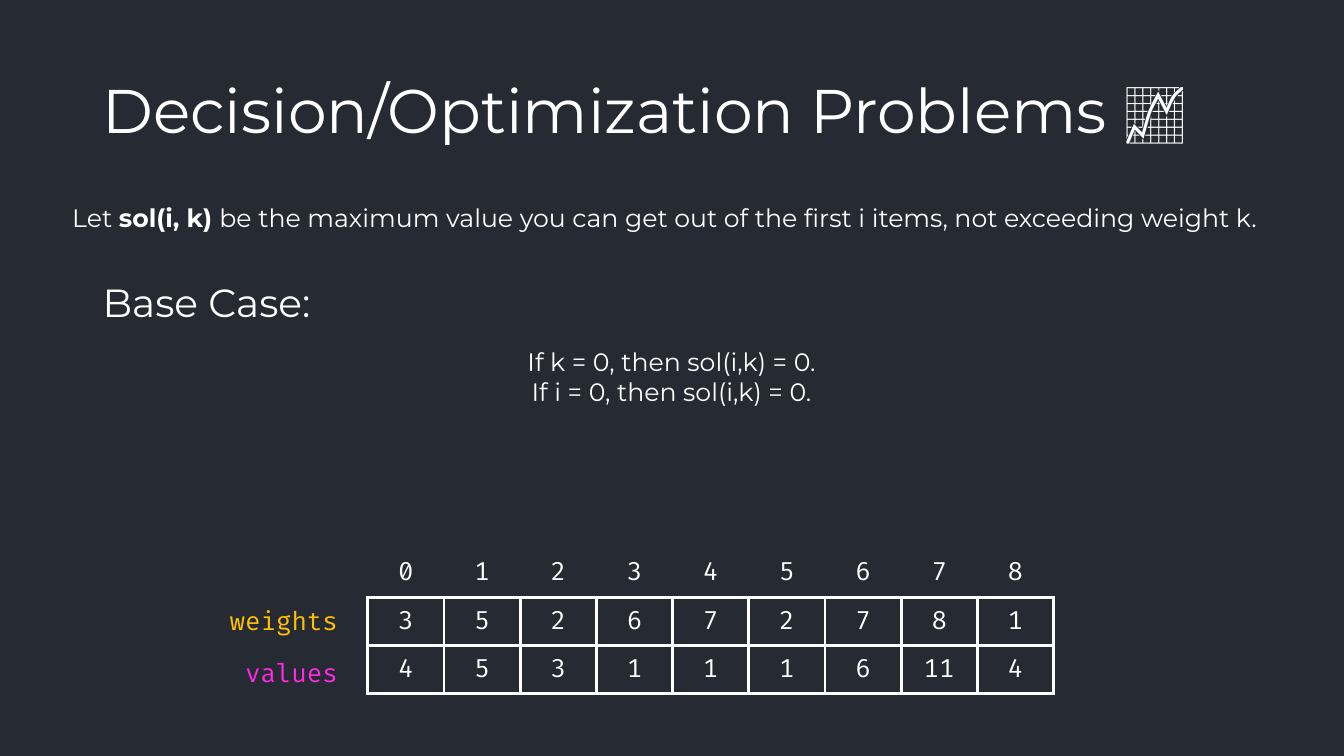
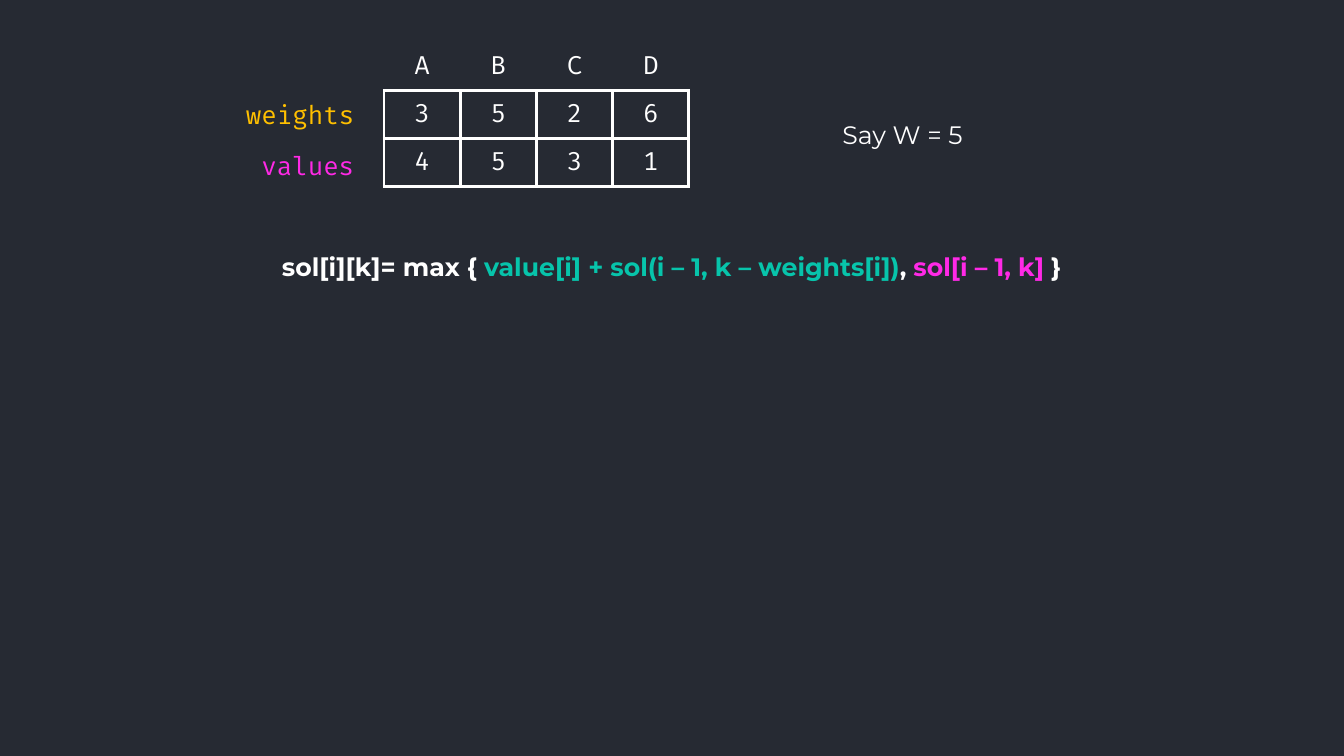
import pptx
import pptx.dml.color
import pptx.enum.text
import pptx.oxml
import pptx.oxml.ns
import pptx.util

Cm, Pt = pptx.util.Cm, pptx.util.Pt
ALIGN = pptx.enum.text.PP_ALIGN
ANCHOR = pptx.enum.text.MSO_ANCHOR

# Shared look
BACKGROUND, WHITE = "262A33", "FFFFFF"
AMBER, MAGENTA, TEAL = "FFC000", "FF29E6", "07C4AB"
PROSE, CODE = "Montserrat", "Fira Code"
BODY_SIZE = 18
COLUMN_WIDTH, ROW_HEIGHT = 1.92, 1.21
BORDER_WIDTH = Pt(2.25)
LABEL_OFFSET, LABEL_WIDTH, LABEL_STEP = 4.06, 3.56, 1.3

# Content: a run is (text, colour, bold), a paragraph is a list of runs
TITLE = [[("Decision/Optimization Problems 📈", WHITE, False)]]
DEFINITION = [[
    ("Let ", WHITE, False),
    ("sol(i, k) ", WHITE, True),
    ("be the maximum value you can get out of the first i items, "
     "not exceeding weight k.", WHITE, False),
]]
BASE_CASE_HEADING = [[("Base Case:", WHITE, False)]]
BASE_CASES = [
    [("If k = 0, then sol(i,k) = 0.", WHITE, False)],
    [("If i = 0, then sol(i,k) = 0.", WHITE, False)],
]
RECURRENCE = [[
    ("sol[i][k]= max { ", WHITE, True),
    ("value[i] + sol(i – 1, k – weights[i])", TEAL, True),
    (", ", WHITE, True),
    ("sol[i – 1, k] ", MAGENTA, True),
    ("}", WHITE, True),
]]
CAPACITY = [[("Say W = 5", WHITE, False)]]
ITEM_LABELS = [("weights", AMBER), ("values", MAGENTA)]
NUMBERED_ITEMS = [
    ["0", "1", "2", "3", "4", "5", "6", "7", "8"],
    ["3", "5", "2", "6", "7", "2", "7", "8", "1"],
    ["4", "5", "3", "1", "1", "1", "6", "11", "4"],
]
LETTERED_ITEMS = [
    ["A", "B", "C", "D"],
    ["3", "5", "2", "6"],
    ["4", "5", "3", "1"],
]


def rgb(colour):
    return pptx.dml.color.RGBColor.from_string(colour)


def add_run(paragraph, text, font, size, colour, bold=False):
    run = paragraph.add_run()
    run.text = text
    run.font.name = font
    run.font.size = Pt(size)
    run.font.bold = bold
    run.font.color.rgb = rgb(colour)


def add_text(slide, box, paragraphs, font=PROSE, size=BODY_SIZE,
             align=ALIGN.LEFT, anchor=ANCHOR.TOP, wrap=True, spacing=1.0):
    frame = slide.shapes.add_textbox(*map(Cm, box)).text_frame
    frame.word_wrap = wrap
    frame.vertical_anchor = anchor
    for index, runs in enumerate(paragraphs):
        paragraph = frame.add_paragraph() if index else frame.paragraphs[0]
        paragraph.alignment = align
        paragraph.line_spacing = spacing
        for text, colour, bold in runs:
            add_run(paragraph, text, font, size, colour, bold)


def set_borders(cell, visible_sides):
    properties = cell._tc.get_or_add_tcPr()
    for side in "LRTB":
        fill = (f'<a:solidFill><a:srgbClr val="{WHITE}"/></a:solidFill>'
                if side in visible_sides else "<a:noFill/>")
        properties.append(pptx.oxml.parse_xml(
            f'<a:ln{side} {pptx.oxml.ns.nsdecls("a")} w="{BORDER_WIDTH}">'
            f"{fill}</a:ln{side}>"))


def add_items(slide, left, top, rows):
    """Table of items with a borderless header and labels on its left."""
    for number, (label, colour) in enumerate(ITEM_LABELS, start=1):
        box = (left - LABEL_OFFSET, top + number * LABEL_STEP, LABEL_WIDTH, 1.02)
        add_text(slide, box, [[(label, colour, False)]], font=CODE,
                 align=ALIGN.RIGHT)

    width, height = COLUMN_WIDTH * len(rows[0]), ROW_HEIGHT * len(rows)
    table = slide.shapes.add_table(
        len(rows), len(rows[0]), Cm(left), Cm(top), Cm(width), Cm(height)).table
    table.first_row = table.horz_banding = False
    for column in table.columns:
        column.width = Cm(COLUMN_WIDTH)
    for row_index, row in enumerate(rows):
        table.rows[row_index].height = Cm(ROW_HEIGHT)
        for column_index, value in enumerate(row):
            cell = table.cell(row_index, column_index)
            cell.vertical_anchor = ANCHOR.MIDDLE
            set_borders(cell, "LRTB" if row_index else "B")
            cell.fill.background()
            paragraph = cell.text_frame.paragraphs[0]
            paragraph.alignment = ALIGN.CENTER
            add_run(paragraph, value, CODE, BODY_SIZE, WHITE)


def build_base_case(slide):
    add_text(slide, (2.34, 1.02, 29.21, 3.68), TITLE, size=44,
             anchor=ANCHOR.MIDDLE, spacing=0.9)
    add_text(slide, (1.57, 4.98, 30.71, 1.02), DEFINITION, wrap=False)
    add_text(slide, (2.34, 7.01, 29.21, 1.42), BASE_CASE_HEADING, size=28,
             spacing=0.9)
    add_text(slide, (5.61, 8.59, 22.63, 1.8), BASE_CASES, align=ALIGN.CENTER)
    add_items(slide, 9.27, 13.84, NUMBERED_ITEMS)


def build_recurrence(slide):
    add_items(slide, 9.68, 1.07, LETTERED_ITEMS)
    add_text(slide, (20.98, 2.87, 3.58, 1.02), CAPACITY, wrap=False)
    add_text(slide, (4.9, 6.2, 24.05, 1.02), RECURRENCE, align=ALIGN.CENTER)


def main():
    deck = pptx.Presentation()
    deck.slide_width, deck.slide_height = Cm(33.87), Cm(19.05)
    backdrop = deck.slide_master.background.fill
    backdrop.solid()
    backdrop.fore_color.rgb = rgb(BACKGROUND)
    for build in (build_base_case, build_recurrence):
        build(deck.slides.add_slide(deck.slide_layouts[6]))
    deck.save("out.pptx")


if __name__ == "__main__":
    main()
